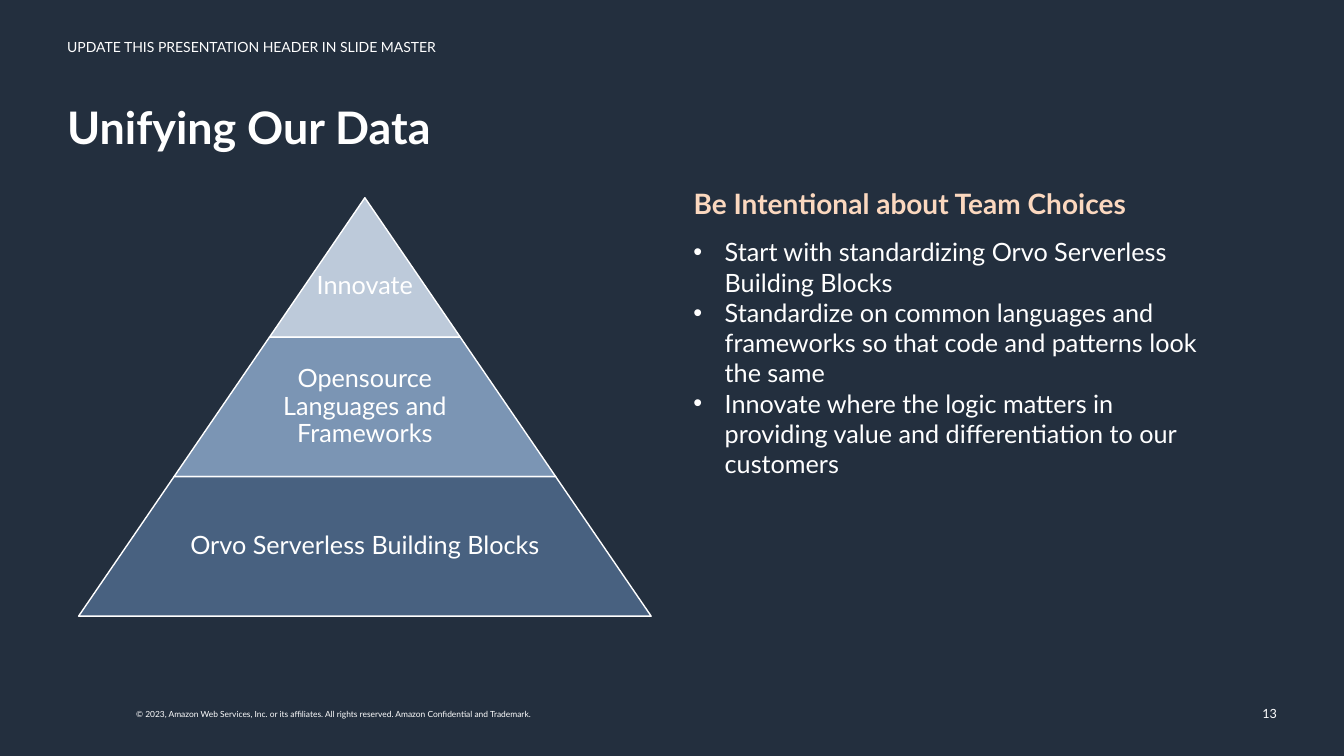
from lxml import etree
from pptx import Presentation
from pptx import util as u
from pptx.dml.color import RGBColor
from pptx.enum import shapes, text
from pptx.oxml import ns

WIDTH, HEIGHT = u.Inches(13.33), u.Inches(7.5)
GRID = 20  # columns and rows on the slide
FONT = "Lato"
COLORS = {"night": "232F3E", "white": "FFFFFF", "peach": "FBD8BF",
          "light": "BDCADA", "middle": "7B95B4", "deep": "486180"}
TIERS = [("Innovate", "light"),
         ("Opensource Languages and Frameworks", "middle"),
         ("Orvo Serverless Building Blocks", "deep")]
CHOICES = [
    "Start with standardizing Orvo Serverless Building Blocks",
    "Standardize on common languages and frameworks so that code and patterns look the same",
    "Innovate where the logic matters in providing value and differentiation to our customers",
]
COPYRIGHT = ("© 2023, Amazon Web Services, Inc. or its affiliates. All rights reserved. "
             "Amazon Confidential and Trademark.")


def color(name):
    return RGBColor.from_string(COLORS[name])


def cell(left, top, width, height):
    """Turn columns and rows of the grid into slide lengths."""
    return [round(share * side / GRID) for share, side in
            ((left, WIDTH), (top, HEIGHT), (width, WIDTH), (height, HEIGHT))]


def add_bullet(para):
    props = para._p.get_or_add_pPr()
    props.set("marL", str(u.Inches(0.31)))
    props.set("indent", str(-u.Inches(0.31)))
    for tag, name, value in (("a:buFont", "typeface", "Arial"), ("a:buChar", "char", "•")):
        etree.SubElement(props, ns.qn(tag)).set(name, value)


def add_text(owner, place, lines, size, tint="white", bold=False, align="LEFT", anchor="TOP",
             insets=(0, 0.05, 0, 0.05), spacing=1.0, bullets=False, wrap=True):
    box = owner.shapes.add_textbox(*cell(*place))
    frame = box.text_frame
    frame.word_wrap = wrap
    frame.vertical_anchor = getattr(text.MSO_ANCHOR, anchor)
    (frame.margin_left, frame.margin_top,
     frame.margin_right, frame.margin_bottom) = map(u.Inches, insets)
    for index, line in enumerate(lines):
        para = frame.add_paragraph() if index else frame.paragraphs[0]
        para.alignment = getattr(text.PP_ALIGN, align)
        para.line_spacing = spacing
        if bullets:
            add_bullet(para)
        span = para.add_run()
        span.text = line
        span.font.name, span.font.size, span.font.bold = FONT, u.Pt(size), bold
        span.font.color.rgb = color(tint)


def add_pyramid(page, center, top, step, tier_height):
    """Stack trapezoids, each one step wider than the tier above."""
    pyramid = page.shapes.add_group_shape()
    for index, (label, tint) in enumerate(TIERS):
        width = step * (index + 1)
        level = top + tier_height * index
        tier = pyramid.shapes.add_shape(
            shapes.MSO_SHAPE.TRAPEZOID, *cell(center - width / 2, level, width, tier_height))
        tier.adjustments[0] = step / 2 * WIDTH / (tier_height * HEIGHT)
        tier.shadow.inherit = False
        tier.fill.solid()
        tier.fill.fore_color.rgb = color(tint)
        tier.line.color.rgb = color("white")
        tier.line.width = u.Pt(1)

        is_tip = index == 0
        label_width = width if is_tip else width * 0.65
        add_text(pyramid, (center - label_width / 2, level, label_width, tier_height),
                 [label], 18, align="CENTER", anchor="MIDDLE", spacing=0.9,
                 insets=(0.03, 0.41 if is_tip else 0.03, 0.03, 0.03))


def main():
    deck = Presentation()
    deck.slide_width, deck.slide_height = WIDTH, HEIGHT
    page = deck.slides.add_slide(deck.slide_layouts[6])
    page.background.fill.solid()
    page.background.fill.fore_color.rgb = color("night")

    add_text(page, (1, 0.93, 18, 0.69), ["UPDATE THIS PRESENTATION HEADER IN SLIDE MASTER"],
             10, spacing=0.9)
    add_text(page, (1, 2.67, 18, 1.57), ["Unifying Our Data"], 32, bold=True, spacing=0.9)
    add_pyramid(page, center=5.43, top=5.23, step=2.84, tier_height=3.69)
    add_text(page, (10.32, 4.91, 7.5, 1.2), ["Be Intentional about Team Choices"],
             20, tint="peach", bold=True, spacing=0.9)
    add_text(page, (10.32, 6.13, 7.86, 6.72), CHOICES, 18, bullets=True)
    add_text(page, (1.88, 18.64, 6.46, 0.53), [COPYRIGHT], 6,
             insets=(0.1, 0.05, 0.1, 0.05), wrap=False)
    add_text(page, (14.65, 18.35, 4.5, 1.07), ["13"], 9, align="RIGHT", anchor="MIDDLE",
             insets=(0.1, 0.05, 0.1, 0.05))
    deck.save("out.pptx")


if __name__ == "__main__":
    main()
